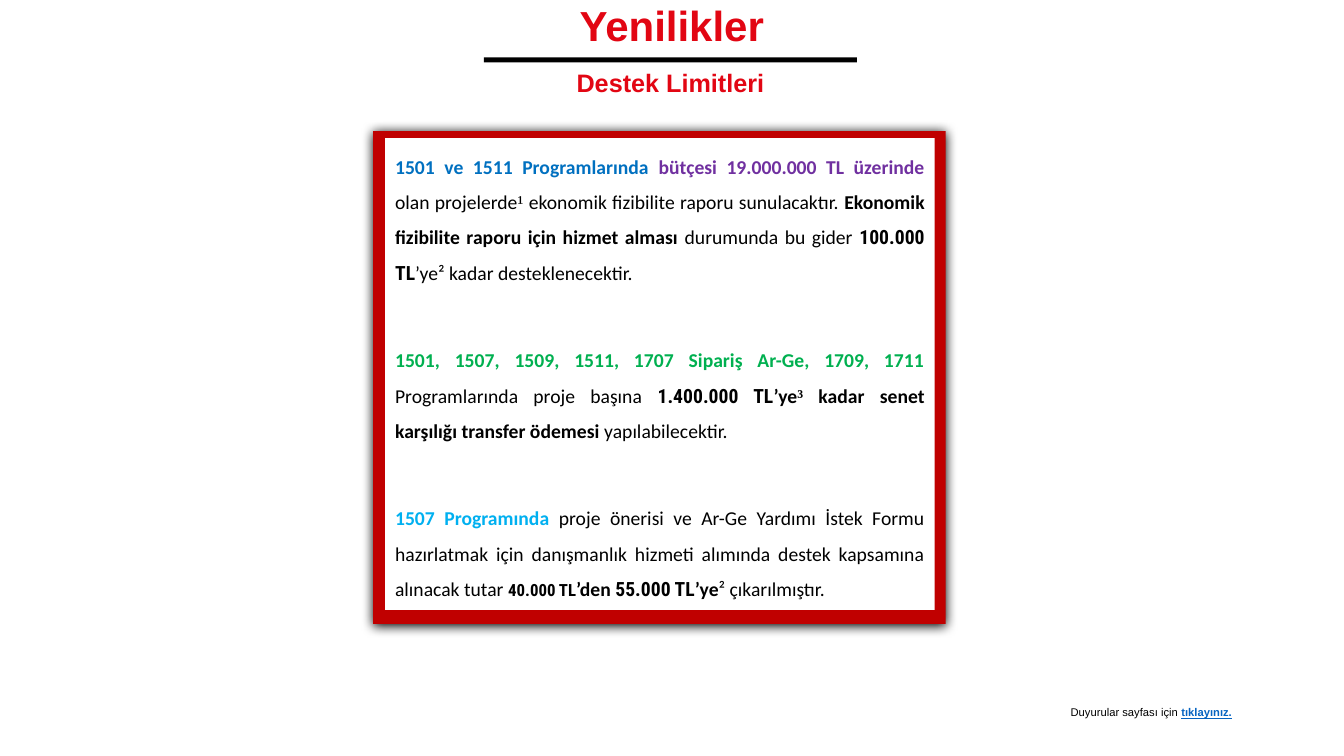
from lxml import etree
from pptx import Presentation
from pptx.dml.color import RGBColor
from pptx.enum import shapes, text
from pptx.oxml import ns
from pptx.util import Inches, Pt

HUES = {"red": "E20613", "frame": "C00000", "black": "000000", "white": "FFFFFF",
        "blue": "0070C0", "purple": "7030A0", "green": "00B050",
        "sky": "00B0F0", "link": "0563C1"}

SANS, BODY, SLIM, ROMAN = "Arial", "Calibri", "Roboto Condensed", "Times New Roman"

TITLE = [("Yenilikler", "red", True, SANS, 30)]
SUBTITLE = [("Destek Limitleri", "red", True, SANS, 18)]
NOTICE = [("Duyurular sayfası için ", "black", False, SANS, 8),
          ("tıklayınız.", "link", True, SANS, 8)]
LIMITS = [
    [("1501 ve 1511 Programlarında ", "blue", True, BODY, 14),
     ("bütçesi 19.000.000 TL üzerinde ", "purple", True, BODY, 14),
     ("olan projelerde", "black", False, BODY, 14),
     ("¹", "black", False, ROMAN, 14),
     (" ekonomik fizibilite raporu sunulacaktır. ", "black", False, BODY, 14),
     ("Ekonomik fizibilite raporu için hizmet alması ", "black", True, BODY, 14),
     ("durumunda bu gider ", "black", False, BODY, 14),
     ("100.000 TL", "black", True, SLIM, 14),
     ("’ye² kadar desteklenecektir.", "black", False, BODY, 14)],
    [("1501, 1507, 1509, 1511, 1707 Sipariş Ar-Ge, 1709, 1711 ", "green", True, BODY, 14),
     ("Programlarında proje başına ", "black", False, BODY, 14),
     ("1.400.000 TL", "black", True, SLIM, 14),
     ("’ye", "black", True, BODY, 14),
     ("³", "black", True, ROMAN, 14),
     (" kadar senet karşılığı transfer ödemesi", "black", True, BODY, 14),
     (" yapılabilecektir.", "black", False, BODY, 14)],
    [("1507 Programında ", "sky", True, BODY, 14),
     ("proje önerisi ve Ar-Ge Yardımı İstek Formu hazırlatmak için danışmanlık "
      "hizmeti alımında destek kapsamına alınacak tutar ", "black", False, BODY, 14),
     ("40.000 TL", "black", True, SLIM, 12),
     ("’den ", "black", True, BODY, 14),
     ("55.000 TL", "black", True, SLIM, 14),
     ("’ye", "black", True, BODY, 14),
     ("² çıkarılmıştır.", "black", False, BODY, 14)],
]

deck = Presentation()
deck.slide_width, deck.slide_height = Inches(13.33), Inches(7.5)
slide = deck.slides.add_slide(deck.slide_layouts[6])


def add_block(box, hue):
    block = slide.shapes.add_shape(shapes.MSO_SHAPE.RECTANGLE, *map(Inches, box))
    block.shadow.inherit = False
    block.fill.solid()
    block.fill.fore_color.rgb = RGBColor.from_string(HUES[hue])
    block.line.fill.background()
    return block


def add_runs(para, parts):
    for words, hue, bold, face, size in parts:
        run = para.add_run()
        run.text = words
        font = run.font
        font.name, font.size, font.bold = face, Pt(size), bold
        font.color.rgb = RGBColor.from_string(HUES[hue])
        font.underline = hue == "link"


def add_label(box, parts, wrap=True):
    frame = slide.shapes.add_textbox(*map(Inches, box)).text_frame
    frame.word_wrap = wrap
    add_runs(frame.paragraphs[0], parts)
    return frame


def add_glow(block):
    effects = block._element.spPr.find(ns.qn("a:effectLst"))
    glow = etree.SubElement(effects, ns.qn("a:outerShdw"), blurRad=str(Pt(8.5)),
                            dist=str(Pt(1)), dir="5400000", algn="ctr", rotWithShape="0")
    etree.SubElement(glow, ns.qn("a:srgbClr"), val=HUES["black"])


add_glow(add_block((3.7, 1.3, 5.68, 4.89), "frame"))

title = add_label((0, 0.13, 13.33, 0.29), TITLE)
title.vertical_anchor = text.MSO_ANCHOR.MIDDLE
title.paragraphs[0].alignment = text.PP_ALIGN.CENTER
title.paragraphs[0].line_spacing = 0.9

add_block((4.8, 0.57, 3.7, 0.05), "black")

panel = add_block((3.82, 1.37, 5.45, 4.68), "white").text_frame
panel.word_wrap = True
panel.vertical_anchor = text.MSO_ANCHOR.TOP
for rank, parts in enumerate(LIMITS):
    para = panel.add_paragraph() if rank else panel.paragraphs[0]
    para.alignment = text.PP_ALIGN.JUSTIFY
    para.line_spacing = 1.5
    if rank:
        para.space_before = Pt(37.3)
    add_runs(para, parts)

add_label((5.62, 0.62, 2.08, 0.4), SUBTITLE, wrap=False)
add_label((10.52, 6.95, 1.83, 0.24), NOTICE)

deck.save("out.pptx")
